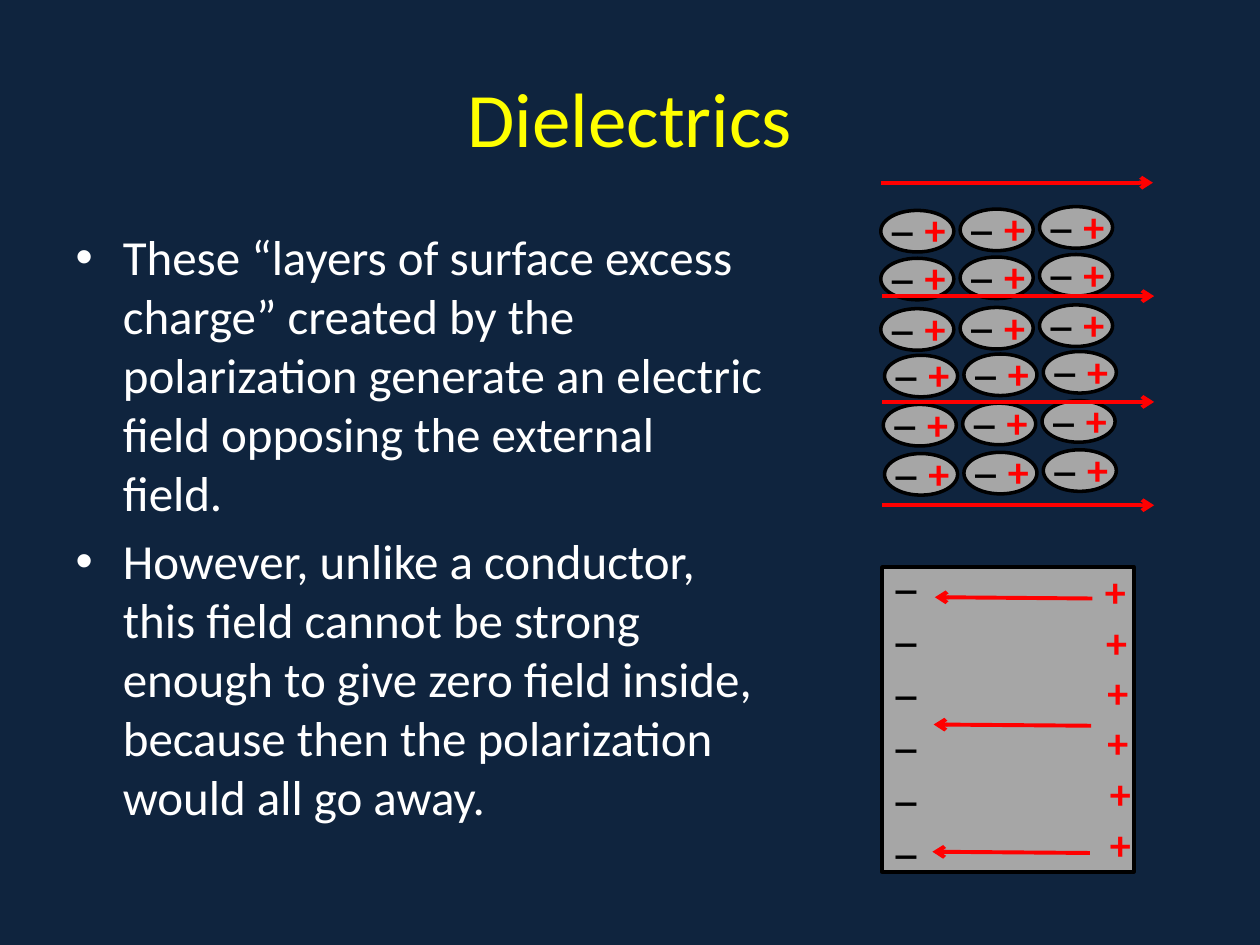
from lxml.etree import SubElement
from pptx import Presentation
from pptx.dml.color import RGBColor
from pptx.enum.shapes import MSO_CONNECTOR as Connector, MSO_SHAPE as Shape
from pptx.enum.text import MSO_AUTO_SIZE as AutoSize
from pptx.oxml.ns import qn
from pptx.util import Emu, Pt

PX = 9144  # 100 px to the inch
NAVY, YELLOW, WHITE = "0F243E", "FFFF00", "FFFFFF"
GRAY, RED, BLACK = "A6A6A6", "FF0000", "000000"

POINTS = [
    "These “layers of surface excess charge” created by the polarization "
    "generate an electric field opposing the external field.",
    "However, unlike a conductor, this field cannot be strong enough to give "
    "zero field inside, because then the polarization would all go away.",
]


def px(*lengths):
    return [Emu(length * PX) for length in lengths]


def color(hex_string):
    return RGBColor.from_string(hex_string)


def add_run(paragraph, text, size, hex_string, bold=None):
    run = paragraph.add_run()
    run.text = text
    run.font.name = "Calibri"
    run.font.size = Pt(size)
    run.font.bold = bold
    run.font.color.rgb = color(hex_string)


def place(placeholder, box):
    placeholder.left, placeholder.top, placeholder.width, placeholder.height = px(*box)


def add_solid(group, kind, box):
    solid = group.shapes.add_shape(kind, *px(*box))
    solid.shadow.inherit = False
    solid.fill.solid()
    solid.fill.fore_color.rgb = color(GRAY)
    solid.line.color.rgb = color(BLACK)
    solid.line.width = Pt(2)


def add_charge(group, sign, box):
    charge = group.shapes.add_textbox(*px(*box))
    frame = charge.text_frame
    frame.word_wrap = True
    frame.auto_size = AutoSize.SHAPE_TO_FIT_TEXT
    add_run(frame.paragraphs[0], sign, 24, RED if sign == "+" else BLACK, True)


def add_field_arrow(group, x1, y1, x2, y2):
    arrow = group.shapes.add_connector(Connector.STRAIGHT, *px(x1, y1, x2, y2))
    arrow.line.color.rgb = color(RED)
    arrow.line.width = Pt(2.25)
    SubElement(arrow.line._get_or_add_ln(), qn("a:tailEnd"), type="arrow")
    SubElement(arrow._element.spPr, qn("a:effectLst"))


def add_title(slide, box):
    title = slide.shapes.title
    place(title, box)
    add_run(title.text_frame.paragraphs[0], "Dielectrics", 44, YELLOW)


def add_body(slide, box):
    body = slide.placeholders[1]
    place(body, box)
    frame = body.text_frame
    for i, point in enumerate(POINTS):
        paragraph = frame.add_paragraph() if i else frame.paragraphs[0]
        add_run(paragraph, point, 28, WHITE)


def add_dipole(group, x, y):
    add_solid(group, Shape.OVAL, (x, y, 58, 33))
    add_charge(group, "+", (x + 25, y - 10, 42, 50))
    add_charge(group, "_", (x - 1, y - 22, 42, 50))


def add_polarized_molecules(slide, left, top):
    group = slide.shapes.add_group_shape()
    # Each row rises slightly to the right
    for dx, dy in [(0, 22), (0, 60), (0, 100), (3, 137), (2, 176), (3, 215)]:
        for column in range(3):
            add_dipole(group, left + dx + 63 * column, top + dy - 3 * column // 2)
    # External field
    for dx, dy in [(0, 0), (1, 90), (1, 174), (1, 256)]:
        add_field_arrow(group, left + dx, top + dy, left + dx + 216, top + dy)


def add_surface_charges(slide, left, top, width, height):
    group = slide.shapes.add_group_shape()
    add_solid(group, Shape.RECTANGLE, (left, top, width, height))
    # Excess charge on the two faces
    for row, dx in enumerate([167, 168, 169, 169, 171, 171]):
        add_charge(group, "+", (left + dx, top - 6 + row * 201 // 5, 56, 49))
        add_charge(group, "_", (left + 1, top - 21 + 42 * row, 108, 65))
    # Opposing field
    for i in range(3):
        x, y = left + 167 - i, top + 25 + 101 * i
        add_field_arrow(group, x, y, x - 125, y - 1)


def main():
    deck = Presentation()
    deck.slide_width, deck.slide_height = px(1000, 750)
    slide = deck.slides.add_slide(deck.slide_layouts[1])
    slide.background.fill.solid()
    slide.background.fill.fore_color.rgb = color(NAVY)
    add_title(slide, (50, 30, 900, 125))
    add_body(slide, (50, 175, 567, 542))
    add_polarized_molecules(slide, 699, 145)
    add_surface_charges(slide, 700, 450, 200, 242)
    deck.save("out.pptx")


if __name__ == "__main__":
    main()
